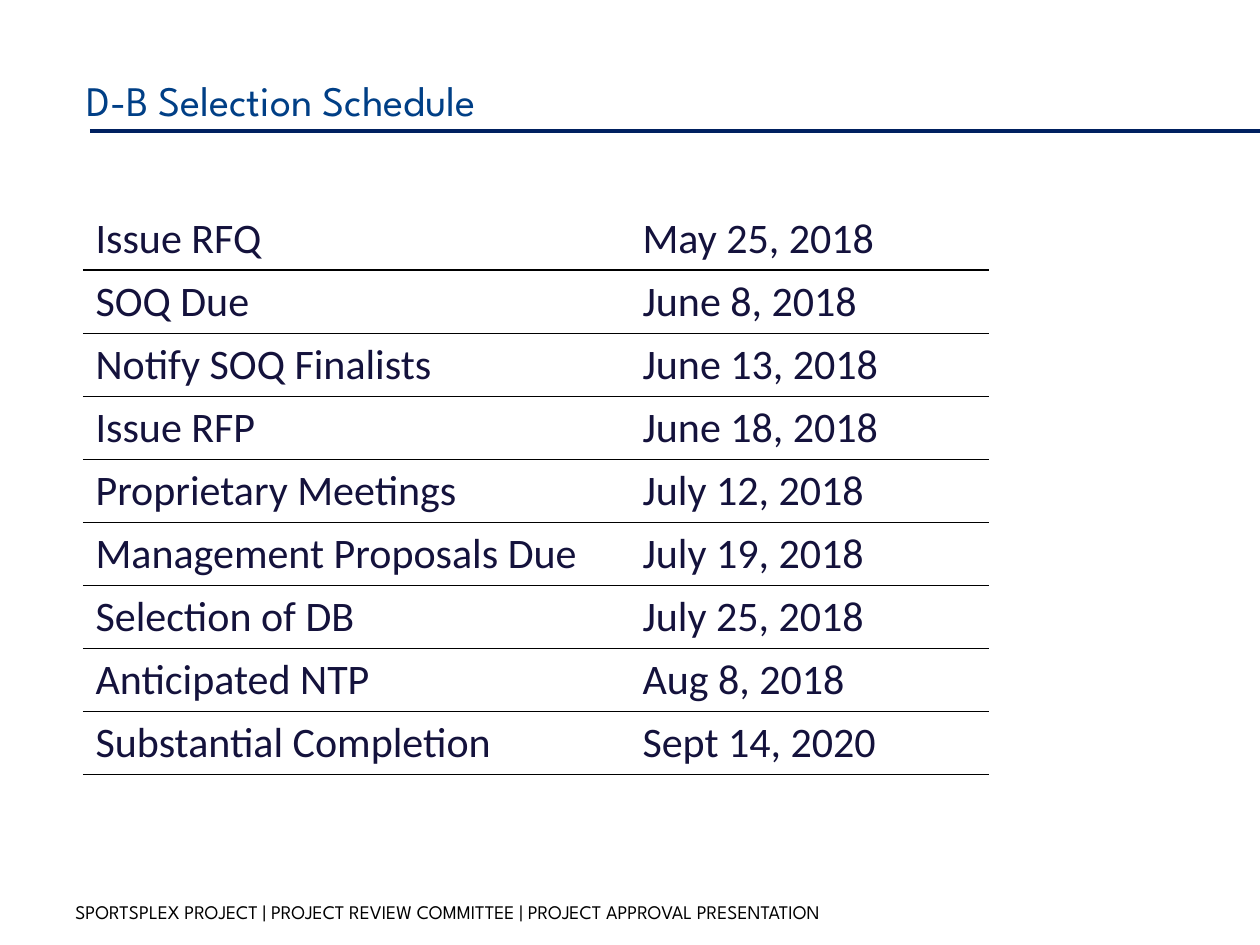
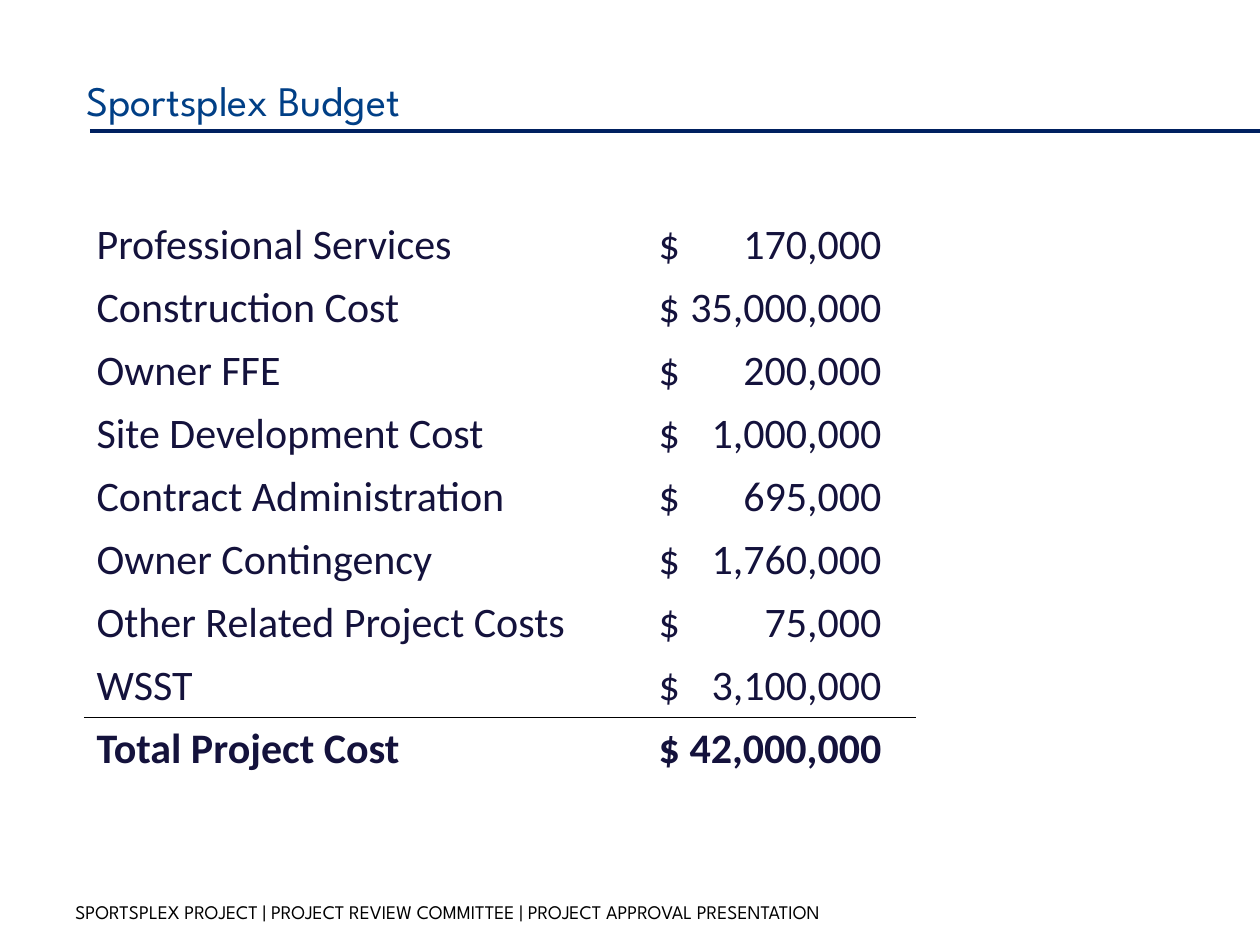
from lxml.etree import SubElement
from pptx import Presentation
from pptx.dml.color import RGBColor
from pptx.enum.shapes import MSO_CONNECTOR
from pptx.enum.text import MSO_ANCHOR
from pptx.oxml.ns import qn
from pptx.util import Emu, Pt

COLORS = {"title": "003F86", "rule": "002060", "body": "14123C",
          "white": "FFFFFF", "black": "000000"}
FORMATS = {
    "title": {"name": "League Spartan", "size": Pt(24)},
    "footer": {"name": "League Spartan", "size": Pt(11)},
    "body": {"name": "Calibri", "size": Pt(24)},
}
FOOTER = "SPORTSPLEX PROJECT | PROJECT REVIEW COMMITTEE | PROJECT APPROVAL PRESENTATION"
NO_GRID_STYLE = "{2D5ABB26-0587-4C30-8999-92F81FD0307C}"
ROW_HEIGHT = 63
AMOUNT_TAB = 223

schedule = [
    ("Issue RFQ", "May 25, 2018"),
    ("SOQ Due", "June 8, 2018"),
    ("Notify SOQ Finalists", "June 13, 2018"),
    ("Issue RFP", "June 18, 2018"),
    ("Proprietary Meetings", "July 12, 2018"),
    ("Management Proposals Due", "July 19, 2018"),
    ("Selection of DB", "July 25, 2018"),
    ("Anticipated NTP", "Aug 8, 2018"),
    ("Substantial Completion", "Sept 14, 2020"),
]
budget = [
    ("Professional Services", "$\t170,000"),
    ("Construction Cost", "$\t35,000,000"),
    ("Owner FFE", "$\t200,000"),
    ("Site Development Cost", "$\t1,000,000"),
    ("Contract Administration", "$\t695,000"),
    ("Owner Contingency", "$\t1,760,000"),
    ("Other Related Project Costs", "$\t75,000"),
    ("WSST", "$\t3,100,000"),
    ("Total Project Cost", "$\t42,000,000"),
]
pages = [
    {"title": "D-B Selection Schedule", "rows": schedule, "at": (83, 207),
     "columns": (547, 359), "ruled": {**dict.fromkeys(range(8), 0.75), 8: 1},
     "bold_row": None},
    {"title": "Sportsplex Budget", "rows": budget, "at": (84, 213),
     "columns": (562, 270), "ruled": {7: 1}, "bold_row": 8},
]


def px(length):
    return Emu(round(length * 914400 / 126))


def write(frame, text, style, color, bold=False):
    run = frame.paragraphs[0].add_run()
    run.text = text
    for attribute, value in {**FORMATS[style], "bold": bold}.items():
        setattr(run.font, attribute, value)
    run.font.color.rgb = RGBColor.from_string(COLORS[color])


deck = Presentation()
deck.slide_width, deck.slide_height = px(1260), px(945)

for page in pages:
    slide = deck.slides.add_slide(deck.slide_layouts[6])

    for text, style, color, box in (
        (FOOTER, "footer", "black", (63, 893, 1160, 37)),
        (page["title"], "title", "title", (74, 64, 1134, 71)),
    ):
        frame = slide.shapes.add_textbox(*map(px, box)).text_frame
        frame.word_wrap = True
        frame.vertical_anchor = MSO_ANCHOR.MIDDLE
        write(frame, text, style, color)

    title_rule = slide.shapes.add_connector(
        MSO_CONNECTOR.STRAIGHT, px(90), px(131), px(1260), px(131))
    title_rule.line.color.rgb = RGBColor.from_string(COLORS["rule"])
    title_rule.line.width = Pt(2)
    SubElement(title_rule.element.spPr, qn("a:effectLst"))

    rows, columns = page["rows"], page["columns"]
    size = (sum(columns), ROW_HEIGHT * len(rows))
    table = slide.shapes.add_table(
        len(rows), len(columns), *map(px, page["at"] + size)).table
    table.first_row = table.horz_banding = False
    table._tbl.tblPr.find(qn("a:tableStyleId")).text = NO_GRID_STYLE
    for column, width in zip(table.columns, columns):
        column.width = px(width)

    for row_index, entries in enumerate(rows):
        for column_index, entry in enumerate(entries):
            cell = table.cell(row_index, column_index)
            if row_index in page["ruled"]:
                border = SubElement(cell._tc.get_or_add_tcPr(), qn("a:lnB"),
                                    w=str(Pt(page["ruled"][row_index])))
                border_fill = SubElement(border, qn("a:solidFill"))
                SubElement(border_fill, qn("a:srgbClr"), val=COLORS["black"])
            cell.fill.solid()
            cell.fill.fore_color.rgb = RGBColor.from_string(COLORS["white"])
            if "\t" in entry:
                properties = cell.text_frame.paragraphs[0]._p.get_or_add_pPr()
                tabs = SubElement(properties, qn("a:tabLst"))
                SubElement(tabs, qn("a:tab"), pos=str(px(AMOUNT_TAB)), algn="r")
            write(cell.text_frame, entry, "body", "body",
                  bold=row_index == page["bold_row"])

deck.save("out.pptx")
